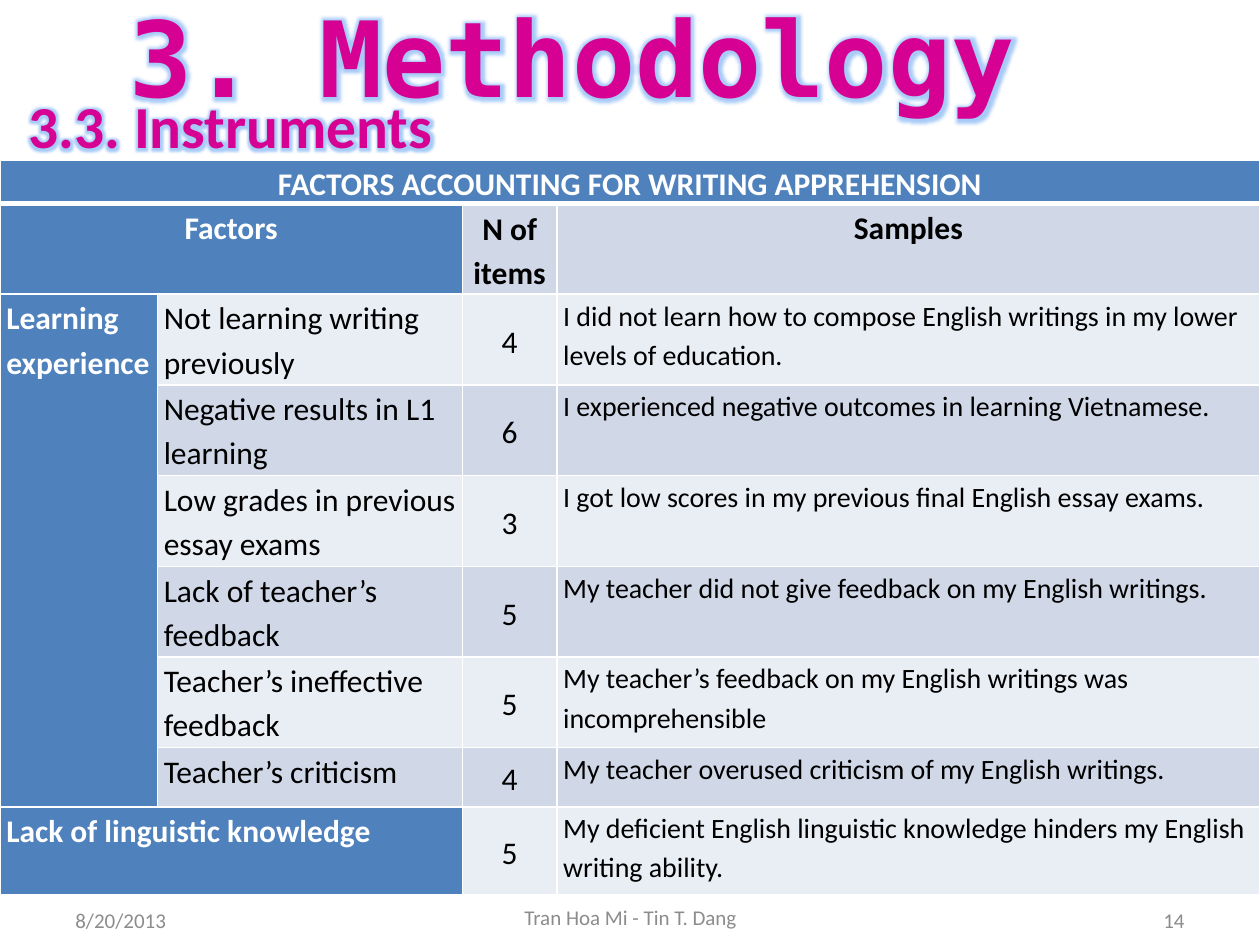
from lxml import etree
from pptx import Presentation
from pptx.dml.color import RGBColor
from pptx.enum.text import MSO_ANCHOR, PP_ALIGN
from pptx.oxml import parse_xml
from pptx.oxml.ns import nsdecls
from pptx.util import Inches, Pt

LEFT, CENTER, RIGHT = PP_ALIGN.LEFT, PP_ALIGN.CENTER, PP_ALIGN.RIGHT
TOP, MIDDLE = MSO_ANCHOR.TOP, MSO_ANCHOR.MIDDLE
WHITE = RGBColor(0xFF, 0xFF, 0xFF)
BLACK = RGBColor(0, 0, 0)
GRAY = RGBColor(0x8C, 0x8C, 0x8C)
PINK = RGBColor(0xD6, 0x00, 0x93)
BLUE = RGBColor(0x4F, 0x81, 0xBD)
BAND_DARK = RGBColor(0xD0, 0xD8, 0xE8)
BAND_LIGHT = RGBColor(0xE9, 0xED, 0xF4)
OUTLINE = RGBColor(0x46, 0x7A, 0xB8)
GLOW = RGBColor(0x60, 0xA0, 0xF0)


def write(tf, text, size, color, align=LEFT, bold=False, font="Calibri"):
    tf.word_wrap = True
    p = tf.paragraphs[0]
    p.text = text
    p.alignment = align
    r = p.runs[0]
    r.font.size, r.font.bold, r.font.name = Pt(size), bold, font
    r.font.color.rgb = color
    return r


def add_glow(r):
    """Give a run a thin outline and a soft glow."""
    rPr = r.font._element if hasattr(r.font, "_element") else r._r.get_or_add_rPr()
    rPr.insert(0, parse_xml(
        f'<a:ln {nsdecls("a")} w="{Pt(0.83)}"><a:solidFill>'
        f'<a:srgbClr val="{OUTLINE}"/></a:solidFill></a:ln>'))
    rPr.insert(2, parse_xml(
        f'<a:effectLst {nsdecls("a")}><a:glow rad="{Pt(8)}"><a:srgbClr val="{GLOW}">'
        '<a:alpha val="55000"/></a:srgbClr></a:glow></a:effectLst>'))


prs = Presentation()
prs.slide_width, prs.slide_height = Inches(10), Inches(7.5)
s = prs.slides.add_slide(prs.slide_layouts[5])

# Footer
for text, x, y, w, align in [
    ("8/20/2013", 0.5, 7.1, 2.33, LEFT),
    ("Tran Hoa Mi - Tin T. Dang", 3.42, 7.08, 3.17, CENTER),
    ("14", 7.17, 7.1, 2.33, RIGHT),
]:
    sp = s.shapes.add_textbox(Inches(x), Inches(y), Inches(w), Inches(0.4))
    sp.text_frame.vertical_anchor = MIDDLE
    write(sp.text_frame, text, 12, GRAY, align)

# Table of factors
rows = [
    ["FACTORS ACCOUNTING FOR WRITING APPREHENSION", "", "", ""],
    ["Factors", "", "N of items", "Samples"],
    ["Learning experience", "Not learning writing previously", "4",
     "I did not learn how to compose English writings in my lower levels of education."],
    ["", "Negative results in L1 learning", "6",
     "I experienced negative outcomes in learning Vietnamese."],
    ["", "Low grades in previous essay exams", "3",
     "I got low scores in my previous final English essay exams."],
    ["", "Lack of teacher’s feedback", "5",
     "My teacher did not give feedback on my English writings."],
    ["", "Teacher’s ineffective feedback", "5",
     "My teacher’s feedback on my English writings was incomprehensible"],
    ["", "Teacher’s criticism", "4",
     "My teacher overused criticism of my English writings."],
    ["Lack of linguistic knowledge", "", "5",
     "My deficient English linguistic knowledge hinders my English writing ability."],
]
col_widths = [1.25, 2.42, 0.75, 5.58]
row_heights = [0.34] + [0.72] * 6 + [0.47, 0.7]
table = s.shapes.add_table(len(rows), len(col_widths), Inches(0), Inches(1.27),
                           Inches(10), Inches(sum(row_heights))).table
table.first_row = table.horz_banding = False
for col, width in zip(table.columns, col_widths):
    col.width = Inches(width)
for row, height in zip(table.rows, row_heights):
    row.height = Inches(height)

for i, row in enumerate(rows):
    for j, text in enumerate(row):
        cell = table.cell(i, j)
        is_head = i == 0 or j == 0 or (j == 1 and i in (1, 8))
        cell.margin_left = cell.margin_right = Inches(0.05)
        cell.margin_top = cell.margin_bottom = 0
        cell.vertical_anchor = MIDDLE if j == 2 else TOP
        tcPr = cell._tc.get_or_add_tcPr()
        for side in "LRTB":
            thick = (i, side) in ((0, "B"), (1, "T"))
            ln = parse_xml(
                f'<a:ln{side} {nsdecls("a")} w="{Pt(3 if thick else 1)}"><a:solidFill>'
                f'<a:srgbClr val="{WHITE}"/></a:solidFill></a:ln{side}>')
            tcPr.append(ln)
        cell.fill.solid()
        cell.fill.fore_color.rgb = BLUE if is_head else (BAND_DARK if i % 2 else BAND_LIGHT)
        if text:
            write(cell.text_frame, text, 16 if j == 3 and i > 1 else 18,
                  WHITE if is_head else BLACK,
                  CENTER if i < 2 or j == 2 else LEFT, is_head or i == 1)
            cell.text_frame.paragraphs[0].line_spacing = 1.15

for first, last in [((0, 0), (0, 3)), ((1, 0), (1, 1)), ((2, 0), (7, 0)), ((8, 0), (8, 1))]:
    table.cell(*first).merge(table.cell(*last))

# Headings, with the title in front
subtitle = s.shapes.add_textbox(Inches(-1.42), Inches(0.66), Inches(6.5), Inches(0.67))
add_glow(write(subtitle.text_frame, "3.3. Instruments", 34, PINK, CENTER, True))

title = s.shapes.title
title.left, title.top = Inches(0.58), Inches(-0.11)
title.width, title.height = Inches(7.92), Inches(1.11)
title.text_frame.vertical_anchor = TOP
add_glow(write(title.text_frame, "3. Methodology", 60, PINK, CENTER, True, "DejaVu Sans Mono"))
etree.ElementBase.append(title.element.getparent(), title.element)

prs.save("out.pptx")
